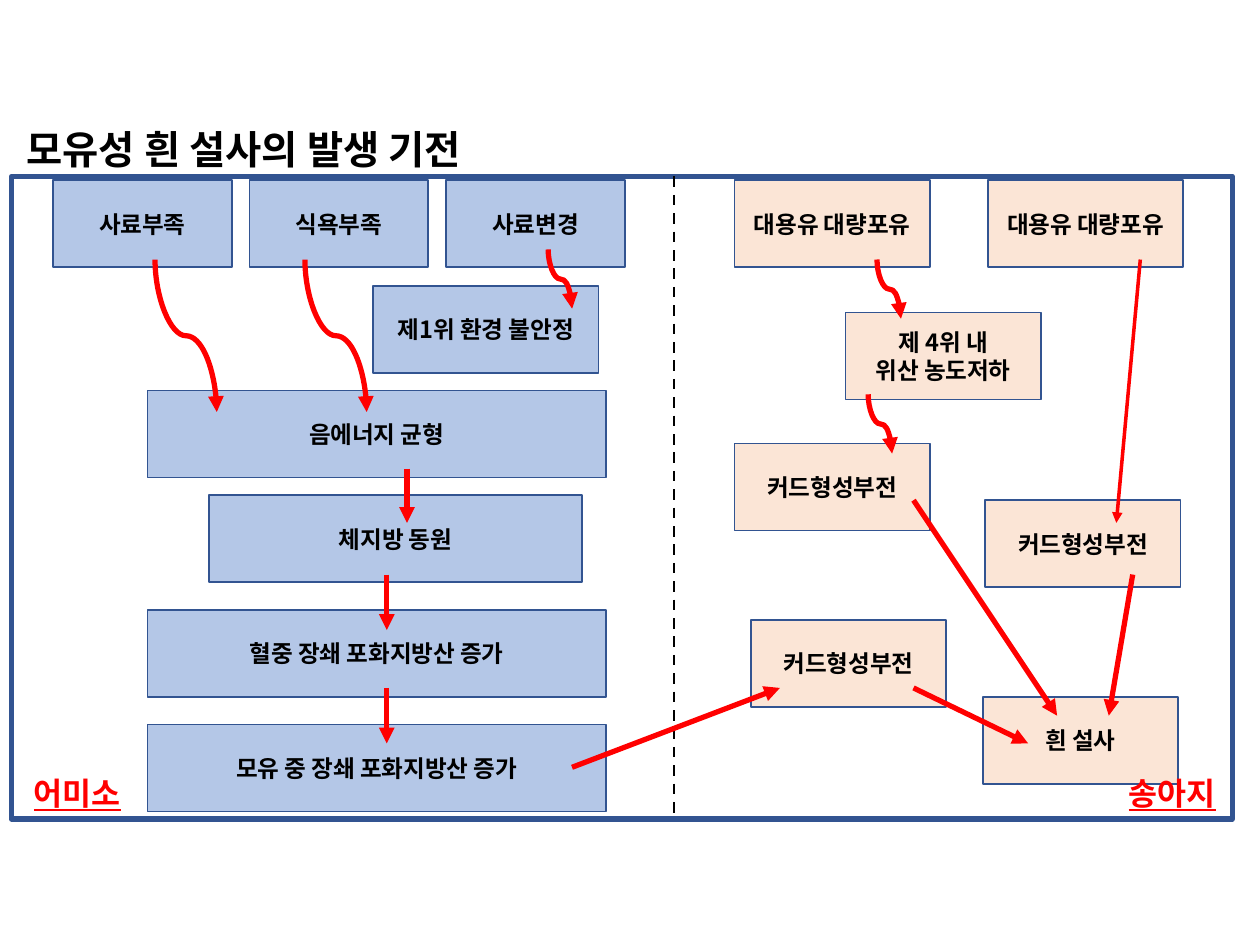
from lxml.etree import SubElement
from pptx import Presentation
from pptx.dml.color import RGBColor
from pptx.enum.dml import MSO_LINE_DASH_STYLE as Dash
from pptx.enum.shapes import MSO_CONNECTOR as Link, MSO_SHAPE as Shape
from pptx.enum.text import MSO_ANCHOR as Anchor, MSO_AUTO_SIZE as Fit, PP_ALIGN as Align
from pptx.oxml.ns import qn
from pptx.util import Inches, Pt

THEME = {
    "font": "Noto Sans CJK KR",
    "ink": "000000", "accent": "FF0000", "border": "325491",
    "cow": "B4C7E7", "calf": "FBE5D6",
    "title": 22.5, "label": 18, "body": 13.5,
    "thick": 3, "medium": 2, "dash": 1.5, "thin": 1,
}

TITLE = "모유성 흰 설사의 발생 기전"
FRAME = (0.09, 1.4, 9.69, 5.1)
DIVIDER_X = 5.35
BOX_HEIGHT, CALF_WIDTH = 0.69, 1.55
CAUSE_TOP, CAUSE_LEFT, CAUSE_WIDTH, CAUSE_STEP = 1.43, 0.42, 1.42, 1.56

CAUSES = ["사료부족", "식욕부족", "사료변경"]
COW_STEPS = [  # text, left, top, width
    ("제1위 환경 불안정", 2.96, 2.27, 1.79),
    ("음에너지 균형", 1.17, 3.1, 3.64),
    ("체지방 동원", 1.66, 3.93, 2.96),
    ("혈중 장쇄 포화지방산 증가", 1.17, 4.84, 3.64),
    ("모유 중 장쇄 포화지방산 증가", 1.17, 5.75, 3.64),
]
CALF_STEPS = [  # text, left, top
    ("대용유 대량포유", 5.83, CAUSE_TOP),
    ("대용유 대량포유", 7.84, CAUSE_TOP),
    ("제 4위 내\n위산 농도저하", 6.71, 2.48),
    ("커드형성부전", 5.83, 3.52),
    ("커드형성부전", 7.82, 3.97),
    ("커드형성부전", 5.96, 4.92),
    ("흰 설사", 7.8, 5.53),
]
SIDE_LABELS = [("어미소", 0.17), ("송아지", 8.86)]
LABEL_TOP, LABEL_WIDTH, LABEL_HEIGHT = 6.09, 1.06, 0.4

LONG_CURVE, SHORT_CURVE = (0.49, 1.21), (0.19, 0.47)
CURVES = [  # start x, start y, (run, drop)
    (1.23, 2.06, LONG_CURVE),
    (2.42, 2.06, LONG_CURVE),
    (4.35, 1.98, SHORT_CURVE),
    (6.96, 2.06, SHORT_CURVE),
    (6.89, 3.13, SHORT_CURVE),
]
ARROWS = [  # start x, start y, end x, end y, weight
    (3.23, 3.72, 3.23, 4.15, "thick"),
    (3.07, 4.56, 3.07, 5.0, "thick"),
    (3.07, 5.46, 3.07, 5.9, "thick"),
    (9.05, 2.06, 8.86, 4.15, "medium"),
    (4.54, 6.09, 6.19, 5.46, "thick"),
    (7.25, 5.46, 8.16, 5.9, "thick"),
    (7.25, 3.97, 8.39, 5.68, "thick"),
    (8.99, 4.56, 8.8, 5.68, "thick"),
]


def color(name):
    return RGBColor.from_string(THEME[name])


def write(box, text, size, ink="ink", align=Align.LEFT, anchor=Anchor.TOP, underline=None):
    frame = box.text_frame
    frame.word_wrap = True
    frame.auto_size = Fit.NONE
    frame.vertical_anchor = anchor
    for index, line in enumerate(text.split("\n")):
        para = frame.add_paragraph() if index else frame.paragraphs[0]
        para.alignment = align
        span = para.add_run()
        span.text = line
        font = span.font
        font.size, font.bold, font.underline = Pt(THEME[size]), True, underline
        font.color.rgb = color(ink)
        font.name = THEME["font"]
        SubElement(font._element, qn("a:ea"), typeface=THEME["font"])


def add_box(page, area, fill=None, weight="thin"):
    box = page.shapes.add_shape(Shape.RECTANGLE, *map(Inches, area))
    box.shadow.inherit = False
    if fill:
        box.fill.solid()
        box.fill.fore_color.rgb = color(fill)
    else:
        box.fill.background()
    box.line.color.rgb = color("border")
    box.line.width = Pt(THEME[weight])
    return box


def add_step(page, text, left, top, width, fill):
    box = add_box(page, (left, top, width, BOX_HEIGHT), fill)
    write(box, text, "body", align=Align.CENTER, anchor=Anchor.MIDDLE)


def add_line(page, kind, points, ink, weight):
    line = page.shapes.add_connector(kind, *map(Inches, points))
    line.line.color.rgb = color(ink)
    line.line.width = Pt(THEME[weight])
    SubElement(line.element.spPr, qn("a:effectLst"))
    return line


def add_arrow(page, kind, points, weight="thick"):
    arrow = add_line(page, kind, points, "accent", weight)
    SubElement(arrow.line._get_or_add_ln(), qn("a:tailEnd"), type="triangle")
    return arrow


def add_curve(page, x, y, run, drop):
    """Draw a downward S-curve: a mirrored horizontal one turned by 270 degrees."""
    middle_x, middle_y = x + run / 2, y + drop / 2
    points = (middle_x + drop / 2, middle_y - run / 2,
              middle_x - drop / 2, middle_y + run / 2)
    curve = add_arrow(page, Link.CURVE, points)
    curve.element.spPr.find(qn("a:xfrm")).set("rot", str(270 * 60000))


def main():
    deck = Presentation()
    deck.slide_width, deck.slide_height = Inches(10), Inches(7.5)
    page = deck.slides.add_slide(deck.slide_layouts[5])

    title = page.shapes.title
    title.left, title.top, title.width, title.height = map(Inches, (0.11, 0.94, 4.9, 0.48))
    write(title, TITLE, "title")

    add_box(page, FRAME, weight="thick")
    for index, text in enumerate(CAUSES):
        add_step(page, text, CAUSE_LEFT + index * CAUSE_STEP, CAUSE_TOP, CAUSE_WIDTH, "cow")
    for step in COW_STEPS:
        add_step(page, *step, "cow")
    for step in CALF_STEPS:
        add_step(page, *step, CALF_WIDTH, "calf")

    top, bottom = FRAME[1], FRAME[1] + FRAME[3]
    divider = add_line(page, Link.STRAIGHT, (DIVIDER_X, top, DIVIDER_X, bottom), "ink", "dash")
    divider.line.dash_style = Dash.DASH

    for text, left in SIDE_LABELS:
        area = (left, LABEL_TOP, LABEL_WIDTH, LABEL_HEIGHT)
        label = page.shapes.add_textbox(*map(Inches, area))
        write(label, text, "label", ink="accent", underline=True)

    for x, y, extent in CURVES:
        add_curve(page, x, y, *extent)
    for *points, weight in ARROWS:
        add_arrow(page, Link.STRAIGHT, points, weight)

    deck.save("out.pptx")


if __name__ == "__main__":
    main()
